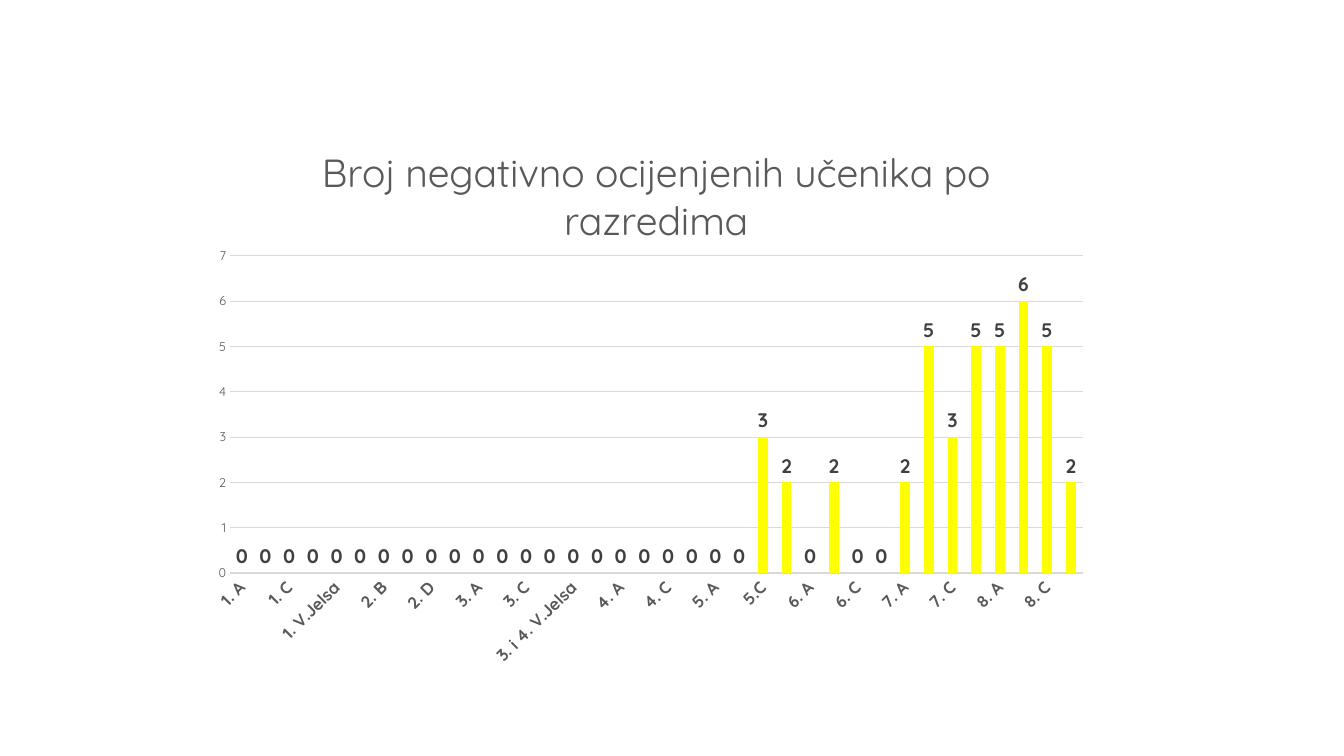
from lxml import etree
from pptx import Presentation
from pptx.chart.data import CategoryChartData
from pptx.dml.color import RGBColor
from pptx.enum.chart import XL_CHART_TYPE, XL_LABEL_POSITION, XL_TICK_MARK
from pptx.oxml.ns import qn
from pptx.util import Inches, Pt

COLUMNS = XL_CHART_TYPE.COLUMN_CLUSTERED
OUTSIDE_END = XL_LABEL_POSITION.OUTSIDE_END
NO_TICK = XL_TICK_MARK.NONE

WHITE = RGBColor(0xFF, 0xFF, 0xFF)
BLACK = RGBColor(0x00, 0x00, 0x00)
GRAY = RGBColor(0x59, 0x59, 0x59)
DARK_GRAY = RGBColor(0x40, 0x40, 0x40)
GRID_GRAY = RGBColor(0xD9, 0xD9, 0xD9)
YELLOW = RGBColor(0xFF, 0xFF, 0x00)

TITLE = "Broj negativno ocijenjenih učenika po razredima"
CLASSES = [
    "1. A", "1. B", "1. C", "1. D", "1. V.Jelsa",
    "2. A", "2. B", "2. C", "2. D", "2. V.Jelsa",
    "3. A", "3. B", "3. C", "3. D", "3. i 4. V.Jelsa", "4. Stative",
    "4. A", "4. B", "4. C", "4.D", "5. A", "5. B", "5.C", "5. D",
    "6. A", "6. B", "6. C", "6. D", "7. A", "7. B", "7. C", "7. D",
    "8. A", "8. B", "8. C", "8. D",
]
PUPILS = [0] * 22 + [3, 2, 0, 2, 0, 0, 2, 5, 3, 5, 5, 6, 5, 2]


def manual_layout(parent, **settings):
    """Place a chart part by fractions of the chart area."""
    layout = parent.find(qn("c:layout"))
    if layout is None:
        layout = etree.Element(qn("c:layout"))
        tx = parent.find(qn("c:tx"))
        parent.insert(0 if tx is None else parent.index(tx) + 1, layout)
    manual = etree.SubElement(layout, qn("c:manualLayout"))
    for tag, value in settings.items():
        etree.SubElement(manual, qn(f"c:{tag}")).set("val", str(value))


class SlideBuilder:
    def __init__(self, prs, font):
        self.font = font
        self.slide = prs.slides.add_slide(prs.slide_layouts[6])
        self.slide.background.fill.solid()
        self.slide.background.fill.fore_color.rgb = WHITE

    def format_font(self, font, size, color, bold=False):
        font.name = self.font
        font.size = Pt(size)
        font.bold = bold
        font.color.rgb = color

    def chart_title(self, chart, text, **fmt):
        chart.has_title = True
        p = chart.chart_title.text_frame.paragraphs[0]
        r = p.add_run()
        r.text = text
        self.format_font(r.font, **fmt)
        chart.chart_title.include_in_layout = False

    def axis(self, axis, **fmt):
        axis.major_tick_mark = axis.minor_tick_mark = NO_TICK
        axis.format.line.fill.background()
        self.format_font(axis.tick_labels.font, **fmt)

    def column_chart(self, title, categories, values, left, top, width, height):
        data = CategoryChartData()
        data.categories = categories
        data.add_series("Series 1", values)
        chart = self.slide.shapes.add_chart(
            COLUMNS, Inches(left), Inches(top), Inches(width), Inches(height), data
        ).chart
        chart.has_legend = False
        self.format_font(chart.font, 10, BLACK)
        self.chart_title(chart, title, size=28, color=GRAY)

        self.axis(chart.category_axis, size=12, color=GRAY, bold=True)
        chart.category_axis._element.txPr.bodyPr.set("rot", "-2700000")
        self.axis(chart.value_axis, size=9, color=GRAY)
        chart.value_axis.minimum_scale = 0
        chart.value_axis.maximum_scale = 7
        chart.value_axis.major_unit = 1
        grid = chart.value_axis.major_gridlines.format.line
        grid.color.rgb = GRID_GRAY
        grid.width = Pt(0.75)

        plot = chart.plots[0]
        plot.gap_width = 150
        plot.vary_by_categories = False
        fill = plot.series[0].format.fill
        fill.solid()
        fill.fore_color.rgb = YELLOW
        plot.has_data_labels = True
        labels = plot.data_labels
        labels.show_value = True
        labels.position = OUTSIDE_END
        self.format_font(labels.font, 14, DARK_GRAY, bold=True)
        return chart


def main():
    prs = Presentation()
    prs.slide_width = Inches(13.33)
    prs.slide_height = Inches(7.5)
    builder = SlideBuilder(prs, "Quicksand")
    chart = builder.column_chart(TITLE, CLASSES, PUPILS, 1.96, 1.13, 8.95, 5.59)
    manual_layout(chart.chart_title._element, xMode="edge", yMode="edge", x=0.13, y=0.04)
    plot_area = chart._chartSpace.chart.plotArea
    manual_layout(plot_area, layoutTarget="inner", xMode="edge", yMode="edge",
                  x=0.036, y=0.252, w=0.945, h=0.563)
    prs.save("out.pptx")


if __name__ == "__main__":
    main()
